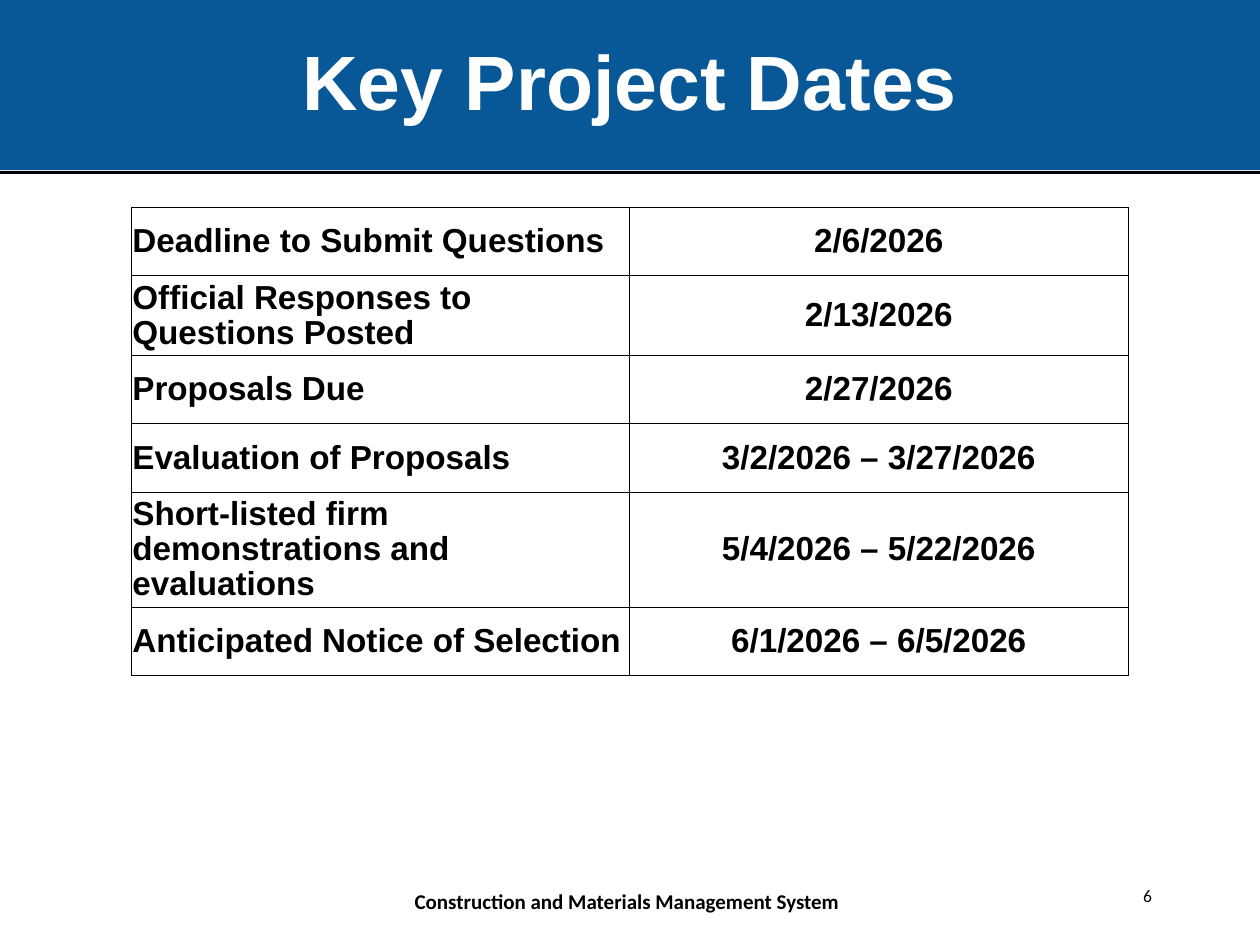
from lxml import etree
from pptx import Presentation
from pptx.dml.color import RGBColor
from pptx.enum.shapes import MSO_CONNECTOR
from pptx.enum.text import MSO_ANCHOR, PP_ALIGN
from pptx.oxml.ns import qn
from pptx.util import Cm, Pt

LEFT, CENTER, RIGHT = PP_ALIGN.LEFT, PP_ALIGN.CENTER, PP_ALIGN.RIGHT
MIDDLE = MSO_ANCHOR.MIDDLE
TITLE_ONLY = 5

# Content
TITLE = "Key Project Dates"
DATES = [
    ("Deadline to Submit Questions", "2/6/2026"),
    ("Official Responses to Questions Posted", "2/13/2026"),
    ("Proposals Due", "2/27/2026"),
    ("Evaluation of Proposals", "3/2/2026 – 3/27/2026"),
    ("Short-listed firm demonstrations and evaluations", "5/4/2026 – 5/22/2026"),
    ("Anticipated Notice of Selection", "6/1/2026 – 6/5/2026"),
]
# text, left, top, width, size, bold, alignment
FOOTERS = [
    ("Construction and Materials Management System ", 7.98, 17.65, 9.42, 12, True, CENTER),
    ("6", 17.75, 17.55, 5.72, 10, False, RIGHT),
]
COLORS = {"band": "085796", "title": "FFFFFF", "text": "000000", "rule": "000000"}

SLIDE_WIDTH, SLIDE_HEIGHT = 25.4, 19.05
BAND_HEIGHT, RULE_TOP = 3.43, 3.48
TABLE_LEFT, TABLE_TOP, COLUMN_WIDTH = 2.64, 4.18, 10.05
ROW_HEIGHT, WRAPPED_ROW_HEIGHT = 1.38, 1.6
WRAP_LENGTH = 32  # longer labels take more than one line


def color(name):
    return RGBColor.from_string(COLORS[name])


def format_paragraph(paragraph, font_name, size, bold, color_name, alignment):
    paragraph.alignment = alignment
    font = paragraph.font
    font.name, font.size, font.bold = font_name, Pt(size), bold
    font.color.rgb = color(color_name)


def add_borders(cell, width=0.5):
    properties = cell._tc.get_or_add_tcPr()
    for side in ("lnL", "lnR", "lnT", "lnB"):
        line = etree.SubElement(properties, qn(f"a:{side}"), w=str(Pt(width)))
        fill = etree.SubElement(line, qn("a:solidFill"))
        etree.SubElement(fill, qn("a:srgbClr"), val=COLORS["rule"])


def format_cell(cell, text, alignment):
    add_borders(cell)
    cell.fill.background()
    cell.vertical_anchor = MIDDLE
    cell.margin_left = cell.margin_right = cell.margin_top = Cm(0.03)
    cell.margin_bottom = 0
    cell.text = text
    paragraph = cell.text_frame.paragraphs[0]
    paragraph.line_spacing = 0.95
    paragraph.space_after = Pt(7.6)
    format_paragraph(paragraph, "Arial", 19, True, "text", alignment)


presentation = Presentation()
presentation.slide_width = Cm(SLIDE_WIDTH)
presentation.slide_height = Cm(SLIDE_HEIGHT)
slide = presentation.slides.add_slide(presentation.slide_layouts[TITLE_ONLY])

# Title band
title = slide.shapes.title
title.left, title.top = 0, 0
title.width, title.height = Cm(SLIDE_WIDTH), Cm(BAND_HEIGHT)
title.fill.solid()
title.fill.fore_color.rgb = color("band")
title.text_frame.text = TITLE
title.text_frame.vertical_anchor = MIDDLE
heading = title.text_frame.paragraphs[0]
heading.line_spacing = 0.9
format_paragraph(heading, "Arial", 44, True, "title", CENTER)

# Rule below the band
rule = slide.shapes.add_connector(
    MSO_CONNECTOR.STRAIGHT, Cm(SLIDE_WIDTH), Cm(RULE_TOP), 0, Cm(RULE_TOP))
rule.line.color.rgb = color("rule")
rule.line.width = Pt(2)
etree.SubElement(rule._element.spPr, qn("a:effectLst"))

# Footer and slide number
for text, left, top, width, size, bold, alignment in FOOTERS:
    box = slide.shapes.add_textbox(Cm(left), Cm(top), Cm(width), Cm(1.02))
    frame = box.text_frame
    frame.word_wrap = True
    frame.vertical_anchor = MIDDLE
    frame.text = text
    format_paragraph(frame.paragraphs[0], "Calibri", size, bold, "text", alignment)

# Table of dates
heights = [WRAPPED_ROW_HEIGHT if len(label) > WRAP_LENGTH else ROW_HEIGHT
           for label, _ in DATES]
table = slide.shapes.add_table(
    len(DATES), 2, Cm(TABLE_LEFT), Cm(TABLE_TOP),
    Cm(2 * COLUMN_WIDTH), Cm(sum(heights))).table
table.first_row = table.horz_banding = False
for column in table.columns:
    column.width = Cm(COLUMN_WIDTH)
for row, height, texts in zip(table.rows, heights, DATES):
    row.height = Cm(height)
    for cell, text, alignment in zip(row.cells, texts, (LEFT, CENTER)):
        format_cell(cell, text, alignment)

presentation.save("out.pptx")
